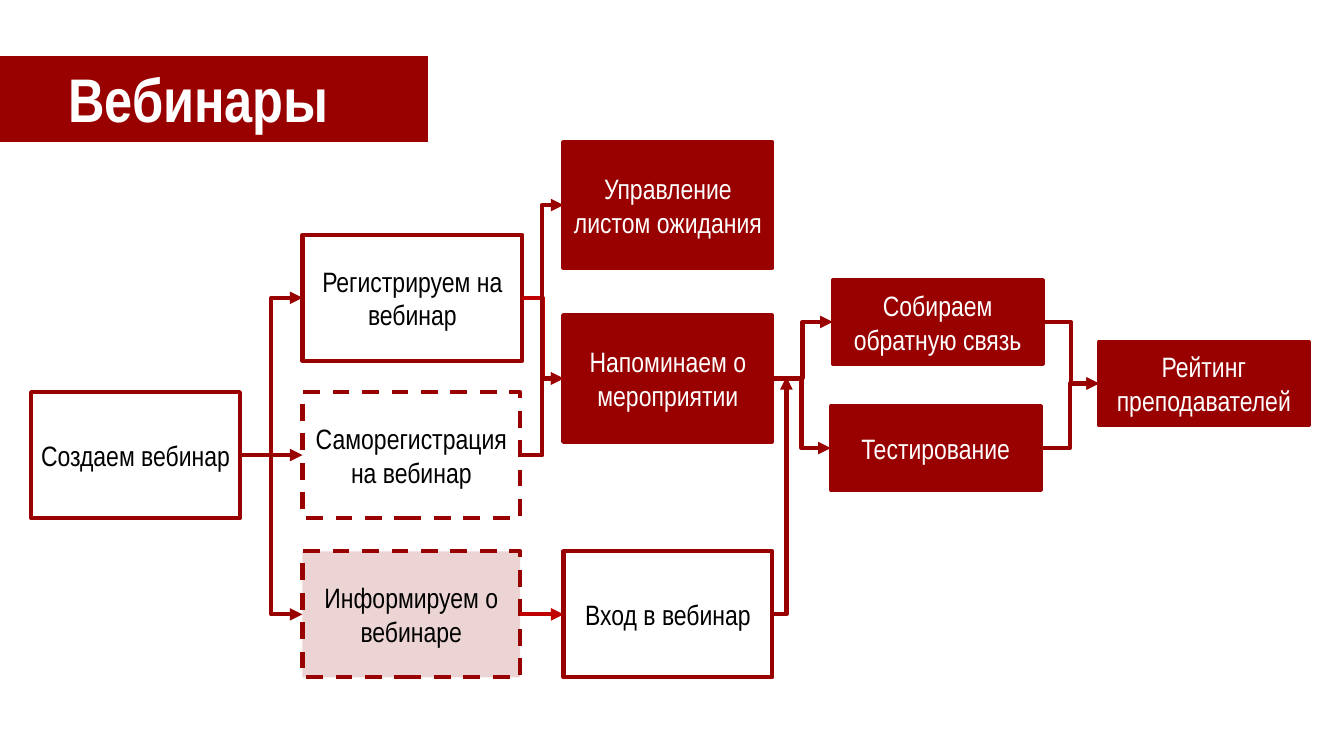
from lxml.etree import SubElement
from pptx import Presentation
from pptx.dml.color import RGBColor
from pptx.enum.dml import MSO_LINE
from pptx.enum.shapes import MSO_CONNECTOR, MSO_SHAPE
from pptx.enum.text import MSO_ANCHOR, PP_ALIGN
from pptx.oxml.ns import qn
from pptx.util import Inches, Pt

DARK_RED = RGBColor(0x99, 0x00, 0x00)
BRIGHT_RED = RGBColor(0xC0, 0x00, 0x00)
WHITE = RGBColor(0xFF, 0xFF, 0xFF)
BLACK = RGBColor(0x00, 0x00, 0x00)
LEFT_SITE, RIGHT_SITE = 1, 3
TALL, LOW = 1.25, 0.83


def write_text(box, text, *, size=20, color=BLACK, bold=False,
               align=PP_ALIGN.CENTER, inset=0.05, line_spacing=None):
    frame = box.text_frame
    frame.word_wrap = True
    frame.vertical_anchor = MSO_ANCHOR.MIDDLE
    frame.margin_left = frame.margin_right = Inches(inset)
    para = frame.paragraphs[0]
    para.alignment = align
    para.line_spacing = line_spacing
    span = para.add_run()
    span.text = text
    span.font.name = "Arial Narrow"
    span.font.size = Pt(size)
    span.font.bold = bold
    span.font.color.rgb = color


class FlowSlide:
    """Holds the flow chart's style and the page being drawn."""

    line_width = Pt(3)

    def __init__(self, page):
        self.page = page

    def title(self, text):
        band = self.page.shapes.add_shape(
            MSO_SHAPE.PARALLELOGRAM, Inches(-0.35), Inches(0.56), Inches(4.59), Inches(0.85))
        band.adjustments[0] = 0
        band.shadow.inherit = False
        band.fill.solid()
        band.fill.fore_color.rgb = DARK_RED
        band.line.fill.background()
        box = self.page.shapes.add_textbox(
            Inches(0.58), Inches(0.59), Inches(3.24), Inches(0.85))
        write_text(box, text, size=44, color=WHITE, bold=True,
                   align=PP_ALIGN.LEFT, inset=0.1, line_spacing=0.9)

    def step(self, text, left, top, width=2.07, height=TALL, *,
             fill=WHITE, alpha=None, dashed=False):
        box = self.page.shapes.add_shape(
            MSO_SHAPE.RECTANGLE, Inches(left), Inches(top), Inches(width), Inches(height))
        box.shadow.inherit = False
        if fill is None:
            box.fill.background()
        else:
            box.fill.solid()
            box.fill.fore_color.rgb = fill
        if alpha is not None:
            tint = box.fill._xPr.find(qn("a:solidFill"))[0]
            SubElement(tint, qn("a:alpha"), val=str(alpha * 1000))
        box.line.color.rgb = DARK_RED
        box.line.width = self.line_width
        if dashed:
            box.line.dash_style = MSO_LINE.DASH
        solid_red = fill == DARK_RED and alpha is None
        write_text(box, text, color=WHITE if solid_red else BLACK)
        return box

    def arrow(self, kind, start, end, color=DARK_RED):
        arrow = self.page.shapes.add_connector(kind, *start, *end)
        arrow.line.color.rgb = color
        arrow.line.width = self.line_width
        SubElement(arrow.line._get_or_add_ln(), qn("a:tailEnd"), type="triangle")
        SubElement(arrow._element.spPr, qn("a:effectLst"))
        return arrow

    def link(self, source, target, color=DARK_RED):
        """Joins the right side of source to the left side of target."""
        start = source.left + source.width, source.top + source.height // 2
        end = target.left, target.top + target.height // 2
        kind = MSO_CONNECTOR.STRAIGHT if start[1] == end[1] else MSO_CONNECTOR.ELBOW
        arrow = self.arrow(kind, start, end, color)
        arrow.begin_connect(source, RIGHT_SITE)
        arrow.end_connect(target, LEFT_SITE)

    def corner_link(self, source, x, y):
        """Runs right from source, then turns once towards the point."""
        start = source.left + source.width, source.top + source.height // 2
        arrow = self.arrow(MSO_CONNECTOR.ELBOW, start, (Inches(x), Inches(y)))
        arrow._element.spPr.find(qn("a:prstGeom")).set("prst", "bentConnector2")


def main():
    deck = Presentation()
    deck.slide_width, deck.slide_height = Inches(13.33), Inches(7.5)
    flow = FlowSlide(deck.slides.add_slide(deck.slide_layouts[6]))
    flow.title("Вебинары")

    create = flow.step("Создаем вебинар", 0.31, 3.89)
    register = flow.step("Регистрируем на вебинар", 3, 2.33, 2.18)
    self_register = flow.step("Саморегистрация на вебинар", 3, 3.89, 2.16,
                              fill=None, dashed=True)
    inform = flow.step("Информируем о вебинаре", 3, 5.47, 2.16,
                       fill=DARK_RED, alpha=17, dashed=True)
    waiting_list = flow.step("Управление листом ожидания", 5.59, 1.41, fill=DARK_RED)
    remind = flow.step("Напоминаем о мероприятии", 5.59, 3.13, fill=DARK_RED)
    enter = flow.step("Вход в вебинар", 5.59, 5.47)
    feedback = flow.step("Собираем обратную связь", 8.26, 2.78, 2.08, LOW, fill=DARK_RED)
    testing = flow.step("Тестирование", 8.24, 4.03, 2.08, LOW, fill=DARK_RED)
    rating = flow.step("Рейтинг преподавателей", 10.9, 3.39, 2.08, LOW, fill=DARK_RED)

    flow.link(register, remind, BRIGHT_RED)
    flow.link(inform, enter, BRIGHT_RED)
    for source, target in (
        (create, register), (create, self_register), (create, inform),
        (self_register, remind), (self_register, waiting_list),
        (remind, feedback), (remind, testing),
        (feedback, rating), (testing, rating),
    ):
        flow.link(source, target)
    flow.corner_link(enter, 7.8, 3.74)

    deck.save("out.pptx")


if __name__ == "__main__":
    main()
